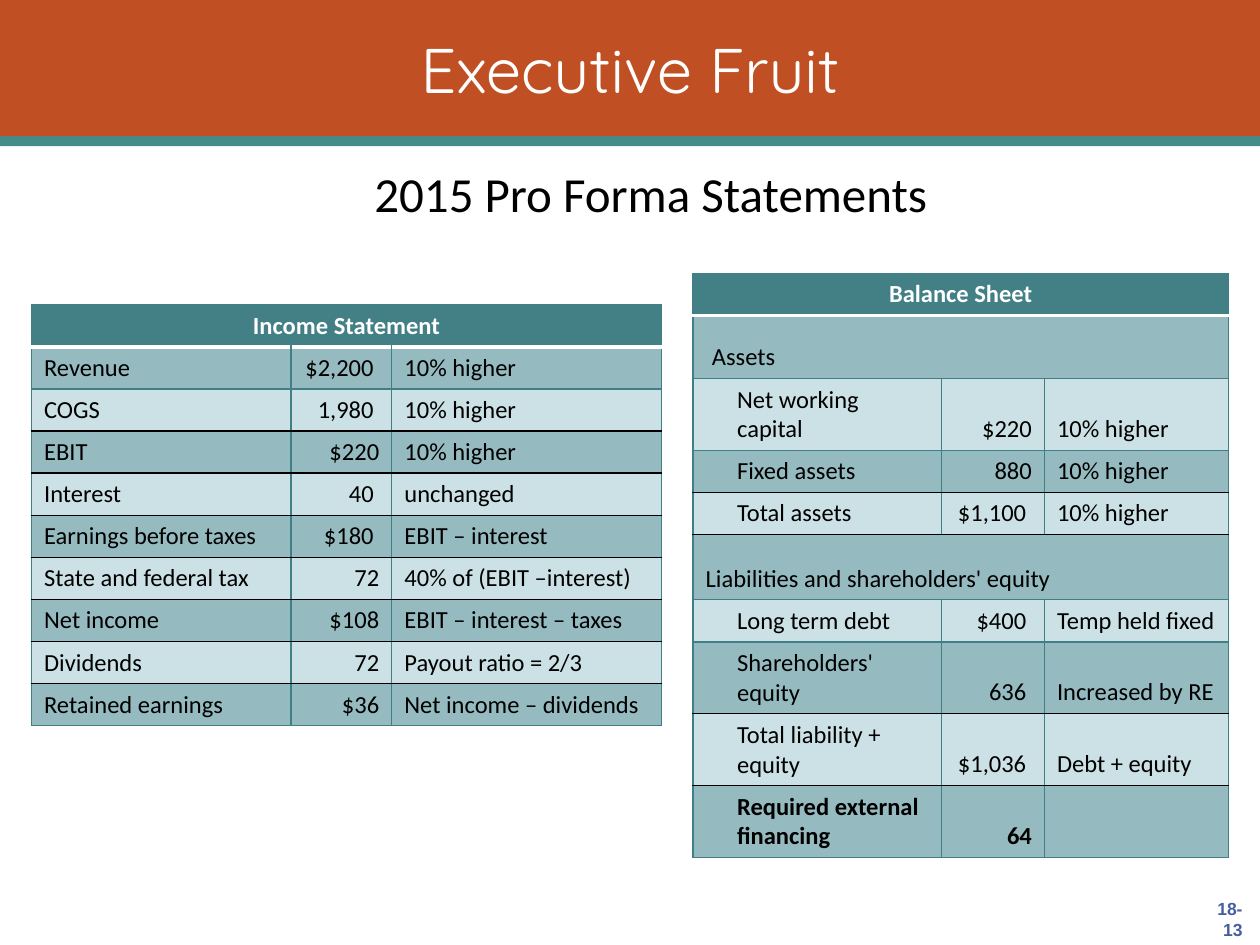
from lxml import etree
from pptx import Presentation
from pptx.dml.color import RGBColor
from pptx.enum.shapes import MSO_SHAPE
from pptx.enum.text import MSO_ANCHOR, PP_ALIGN
from pptx.oxml.ns import qn
from pptx.util import Inches, Pt

LEFT, MID, RIGHT = PP_ALIGN.LEFT, PP_ALIGN.CENTER, PP_ALIGN.RIGHT
TOP, CENTER, LOW = MSO_ANCHOR.TOP, MSO_ANCHOR.MIDDLE, MSO_ANCHOR.BOTTOM
RECT = MSO_SHAPE.RECTANGLE
HEAD, DARK, LIGHT = "438086", "95BABF", "CBE1E5"
WHITE, BLACK, EDGE = "FFFFFF", "000000", "407F85"

BARS = [
    (1.08, 0.08, "458B8A"),
    (0, 1.08, "C05023"),
]
INCOME = {
    "place": (0.25, 2.42),
    "cols": (2.06, 0.8, 2.14),
    "heights": [0.33] * 10,
    "ruled": range(2, 9),
    "indent": 0,
    "rows": [
        ("Income Statement",),
        ("Revenue", "$2,200 ", "10% higher"),
        ("COGS", "1,980 ", "10% higher"),
        ("EBIT", "$220", "10% higher"),
        ("Interest", "40 ", "unchanged"),
        ("Earnings before taxes", "$180 ", "EBIT – interest"),
        ("State and federal tax", "72", "40% of (EBIT –interest)"),
        ("Net income", "$108", "EBIT – interest – taxes"),
        ("Dividends", "72", "Payout ratio = 2/3"),
        ("Retained earnings", "$36", "Net income – dividends"),
    ],
}
BALANCE = {
    "place": (5.5, 2.17),
    "cols": (1.97, 0.82, 1.46),
    "heights": [0.33, 0.5, 0.57, 0.33, 0.33, 0.52, 0.33, 0.57, 0.57, 0.57],
    "ruled": (3, 4, 7, 8),
    "indent": 0.25,
    "rows": [
        ("Balance Sheet",),
        ("Assets",),
        ("Net working capital", "$220", "10% higher"),
        ("Fixed assets", "880", "10% higher"),
        ("Total assets", "$1,100 ", "10% higher"),
        ("Liabilities and shareholders' equity",),
        ("Long term debt", "$400 ", "Temp held fixed"),
        ("Shareholders' equity", "636 ", "Increased by RE"),
        ("Total liability + equity", "$1,036 ", "Debt + equity"),
        ("Required external financing", "64", ""),
    ],
}


def paint(fill, color):
    """Set a solid fill from a hex string."""
    fill.solid()
    fill.fore_color.rgb = RGBColor.from_string(color)


def write(frame, text, size=14, font="Calibri", color=BLACK, bold=False,
          align=LEFT, anchor=LOW, indent=0, wrap=True):
    """Write one formatted paragraph into a text frame."""
    frame.word_wrap = wrap
    frame.vertical_anchor = anchor
    para = frame.paragraphs[0]
    para.alignment = align
    if indent:
        para._p.get_or_add_pPr().set("marL", str(Inches(indent)))
    if not text:
        para.font.size = Pt(size)
        return
    run = para.add_run()
    run.text = text
    run.font.size, run.font.name, run.font.bold = Pt(size), font, bold
    run.font.color.rgb = RGBColor.from_string(color)


def border(cell, top, low):
    """Draw the four borders of a cell from (color, width) pairs."""
    props = cell._tc.get_or_add_tcPr()
    side = (EDGE, 0.75)
    edges = zip(("a:lnL", "a:lnR", "a:lnT", "a:lnB"), (side, side, top, low))
    for spot, (tag, (color, width)) in enumerate(edges):
        line = etree.Element(qn(tag), w=str(Pt(width)))
        fill = etree.SubElement(line, qn("a:solidFill"))
        etree.SubElement(fill, qn("a:srgbClr"), val=color)
        props.insert(spot, line)


def build(slide, data):
    """Add one statement as a table."""
    rows, cols, heights = data["rows"], data["cols"], data["heights"]
    x, y = data["place"]
    table = slide.shapes.add_table(
        len(rows), len(cols), Inches(x), Inches(y),
        Inches(sum(cols)), Inches(sum(heights))).table
    for col, width in zip(table.columns, cols):
        col.width = Inches(width)
    lines = [(EDGE, 0.75), (WHITE, 2)]
    lines += [(BLACK, 1) if i in data["ruled"] else (EDGE, 0.75)
              for i in range(1, len(rows))]
    for i, texts in enumerate(rows):
        table.rows[i].height = Inches(heights[i])
        whole = len(texts) == 1
        if whole:
            table.cell(i, 0).merge(table.cell(i, len(cols) - 1))
        for j in range(len(cols)):
            cell = table.cell(i, j)
            paint(cell.fill, HEAD if i == 0 else DARK if i % 2 else LIGHT)
            border(cell, lines[i], lines[i + 1])
        for j, text in enumerate(texts):
            indent = data["indent"] if j == 0 and not whole else 0
            if text == "Assets":
                indent = 0.05
            cell = table.cell(i, j)
            cell.vertical_anchor = LOW
            write(cell.text_frame, text, color=BLACK if i else WHITE,
                  bold=i == 0 or rows[i][0].startswith("Required"),
                  align=(LEFT if i else MID, RIGHT, LEFT)[j],
                  anchor=None, indent=indent)


def place(shape, x, y, wide, high):
    """Set the position and size of a shape."""
    shape.left, shape.top = Inches(x), Inches(y)
    shape.width, shape.height = Inches(wide), Inches(high)


def main():
    """Build and save the slide."""
    deck = Presentation()
    deck.slide_width, deck.slide_height = Inches(10), Inches(7.5)
    slide = deck.slides.add_slide(deck.slide_layouts[5])
    shapes = slide.shapes
    title = shapes.title
    for y, high, color in BARS:
        bar = shapes.add_shape(RECT, 0, Inches(y), Inches(10), Inches(high))
        bar.shadow.inherit = False
        paint(bar.fill, color)
        bar.line.fill.background()
        title.element.addprevious(bar.element)
    place(title, 0.75, 0.08, 8.5, 0.92)
    write(title.text_frame, "Executive Fruit", size=36, font="Quicksand",
          color=WHITE, align=MID, anchor=CENTER)
    box = shapes.add_textbox(0, 0, 0, 0)
    place(box, 1.75, 1.25, 6.83, 0.57)
    write(box.text_frame, "2015 Pro Forma Statements", size=28,
          align=MID, anchor=TOP)
    for data in (INCOME, BALANCE):
        build(slide, data)
    box = shapes.add_textbox(0, 0, 0, 0)
    place(box, 9.46, 7.08, 0.5, 0.42)
    write(box.text_frame, "18- 13", size=10, font="Arial", color="455EA0",
          bold=True, align=RIGHT, anchor=CENTER, wrap=False)
    deck.save("out.pptx")


if __name__ == "__main__":
    main()
